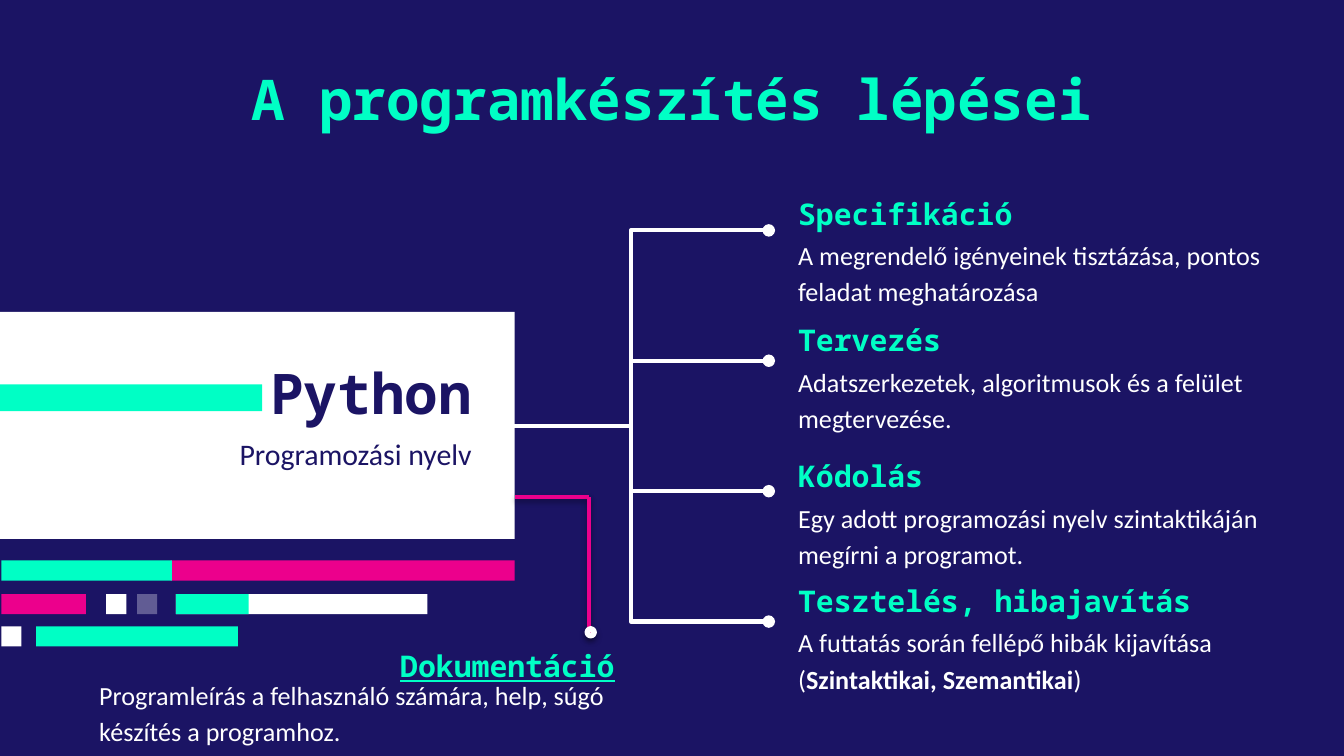
from lxml import etree
from pptx import Presentation
from pptx.dml.color import RGBColor
from pptx.enum.shapes import MSO_CONNECTOR, MSO_SHAPE
from pptx.enum.text import MSO_ANCHOR, PP_ALIGN
from pptx.oxml.ns import qn
from pptx.util import Inches, Pt

STRAIGHT, ELBOW = MSO_CONNECTOR.STRAIGHT, MSO_CONNECTOR.ELBOW
RECT, OVAL = MSO_SHAPE.RECTANGLE, MSO_SHAPE.OVAL
TOP, MIDDLE = MSO_ANCHOR.TOP, MSO_ANCHOR.MIDDLE
LEFT, CENTER, RIGHT = PP_ALIGN.LEFT, PP_ALIGN.CENTER, PP_ALIGN.RIGHT

THEME = {
    "navy": "1B1464", "mint": "00FFC5", "pink": "EC008C", "white": "FFFFFF",
    "mono": "Noto Sans Mono", "sans": "Calibri",
    "title": 30, "head": 16, "body": 14,
}

# Content: heading top, heading, runs of the description as (text, bold)
TITLE = "A programkészítés lépései"
LANGUAGE, LANGUAGE_NOTE = "Python", "Programozási nyelv"
STEPS = [
    (1.44, "Specifikáció",
     [("A megrendelő igényeinek tisztázása, pontos feladat meghatározása", False)]),
    (2.38, "Tervezés",
     [("Adatszerkezetek, algoritmusok és a felület megtervezése.", False)]),
    (3.39, "Kódolás",
     [("Egy adott programozási nyelv szintaktikáján megírni a programot.", False)]),
    (4.32, "Tesztelés, hibajavítás",
     [("A futtatás során fellépő hibák kijavítása (", False),
      ("Szintaktikai, Szemantikai", True), (")", False)]),
]
DOC_HEAD = "Dokumentáció"
DOC_BODY = [("Programleírás a felhasználó számára, help, súgó készítés a programhoz.", False)]

# Decorative code lines: top, then bars as (left, width, colour, opacity in percent)
CODE_LINES = [
    (4.17, [(1.27, 2.56, "pink", 100), (0.01, 1.27, "mint", 100)]),
    (4.42, [(1.31, 1.87, "white", 100), (1.31, 0.54, "mint", 100),
            (0.01, 0.63, "pink", 100), (1.02, 0.15, "white", 31),
            (0.79, 0.15, "white", 100)]),
    (4.66, [(0.01, 0.15, "white", 100), (0.27, 1.5, "mint", 100)]),
]
BAR_H = 0.15
CARD_RIGHT, CARD_MID = 3.83, 3.17
STEP_X, BODY_DROP, BRANCH_PITCH = 5.84, 0.31, 0.97


def color(name):
    return RGBColor.from_string(THEME[name])


def add_box(kind, x, y, w, h, fill, opacity=100):
    s = slide.shapes.add_shape(kind, Inches(x), Inches(y), Inches(w), Inches(h))
    s.shadow.inherit = False
    s.fill.solid()
    s.fill.fore_color.rgb = color(fill)
    s.line.fill.background()
    if opacity < 100:
        clr = s._element.spPr.find(qn("a:solidFill"))[0]
        etree.SubElement(clr, qn("a:alpha"), val=str(opacity * 1000))
    return s


def add_text(runs, x, y, w, h, font, size, fill, align=LEFT, anchor=TOP,
             pad=0, spacing=None):
    s = slide.shapes.add_textbox(Inches(x), Inches(y), Inches(w), Inches(h))
    tf = s.text_frame
    tf.word_wrap = True
    tf.vertical_anchor = anchor
    tf.margin_left = tf.margin_right = Inches(0.1)
    tf.margin_top = tf.margin_bottom = Inches(pad)
    p = tf.paragraphs[0]
    p.alignment = align
    if spacing:
        p.line_spacing = spacing
    for text, bold in runs:
        r = p.add_run()
        r.text = text
        r.font.name, r.font.size, r.font.bold = THEME[font], Pt(THEME[size]), bold
        r.font.color.rgb = color(fill)
    return p


def add_heading(text, x, y, w):
    return add_text([(text, True)], x, y, w, 0.3, "mono", "head", "mint", anchor=MIDDLE)


def add_body(runs, x, y):
    add_text(runs, x, y, 4.16, 0.3, "sans", "body", "white", spacing=1.15)


def add_soft_shadow(effects):
    shadow = etree.SubElement(effects, qn("a:outerShdw"), blurRad=str(Pt(3.1)),
                              dist=str(Pt(1.6)), dir="5400000", rotWithShape="0")
    clr = etree.SubElement(shadow, qn("a:srgbClr"), val="000000")
    etree.SubElement(clr, qn("a:alpha"), val="38000")


def add_line(kind, x1, y1, x2, y2, fill, width):
    s = slide.shapes.add_connector(kind, Inches(x1), Inches(y1), Inches(x2), Inches(y2))
    s.line.color.rgb = color(fill)
    s.line.width = Pt(width)
    effects = etree.SubElement(s._element.spPr, qn("a:effectLst"))
    return s, effects


prs = Presentation()
prs.slide_width, prs.slide_height = Inches(10), Inches(10 * 9 / 16)
slide = prs.slides.add_slide(prs.slide_layouts[6])
slide.background.fill.solid()
slide.background.fill.fore_color.rgb = color("navy")

# Title and language card
add_box(RECT, 0, 2.32, CARD_RIGHT, 1.69, "white")
add_text([(TITLE, True)], 1.4, 0.38, 7.2, 0.73, "mono", "title", "mint", CENTER, pad=0.1)
add_text([(LANGUAGE_NOTE, False)], 0.95, 3.2, 2.66, 0.48, "sans", "head", "navy",
         RIGHT, spacing=1.15)
add_box(RECT, 0, 2.86, 1.95, 0.2, "mint")
add_text([(LANGUAGE, True)], 0.95, 2.7, 2.66, 0.43, "mono", "title", "navy", RIGHT, MIDDLE)

# Decorative code lines
for y, bars in CODE_LINES:
    for x, w, fill, opacity in bars:
        add_box(RECT, x, y, w, BAR_H, fill, opacity)

# Steps with their branches, spread evenly around the card's middle
for i, (y, head, body) in enumerate(STEPS):
    add_heading(head, STEP_X, y, 4.16)
    add_body(body, STEP_X, y + BODY_DROP)
    end_y = CARD_MID + (i - (len(STEPS) - 1) / 2) * BRANCH_PITCH
    branch, _ = add_line(ELBOW, 3.67, CARD_MID, 5.72, end_y, "white", 2.25)
    etree.SubElement(branch._element.spPr.find(qn("a:ln")), qn("a:tailEnd"), type="oval")

# Documentation
p = add_heading(DOC_HEAD, 2.88, 4.8, 4.24)
p.runs[0].font.underline = True
add_body(DOC_BODY, 0.64, 5.02)
for ends in [(CARD_RIGHT, 3.7, 4.38, 3.7), (4.38, 3.7, 4.38, 4.73)]:
    _, effects = add_line(STRAIGHT, *ends, "pink", 2)
    add_soft_shadow(effects)
dot = add_box(OVAL, 4.37, 4.68, 0.05, 0.05, "pink")
dot.line.color.rgb = color("white")
dot.line.width = Pt(3)
add_soft_shadow(dot._element.spPr.find(qn("a:effectLst")))

prs.save("out.pptx")
